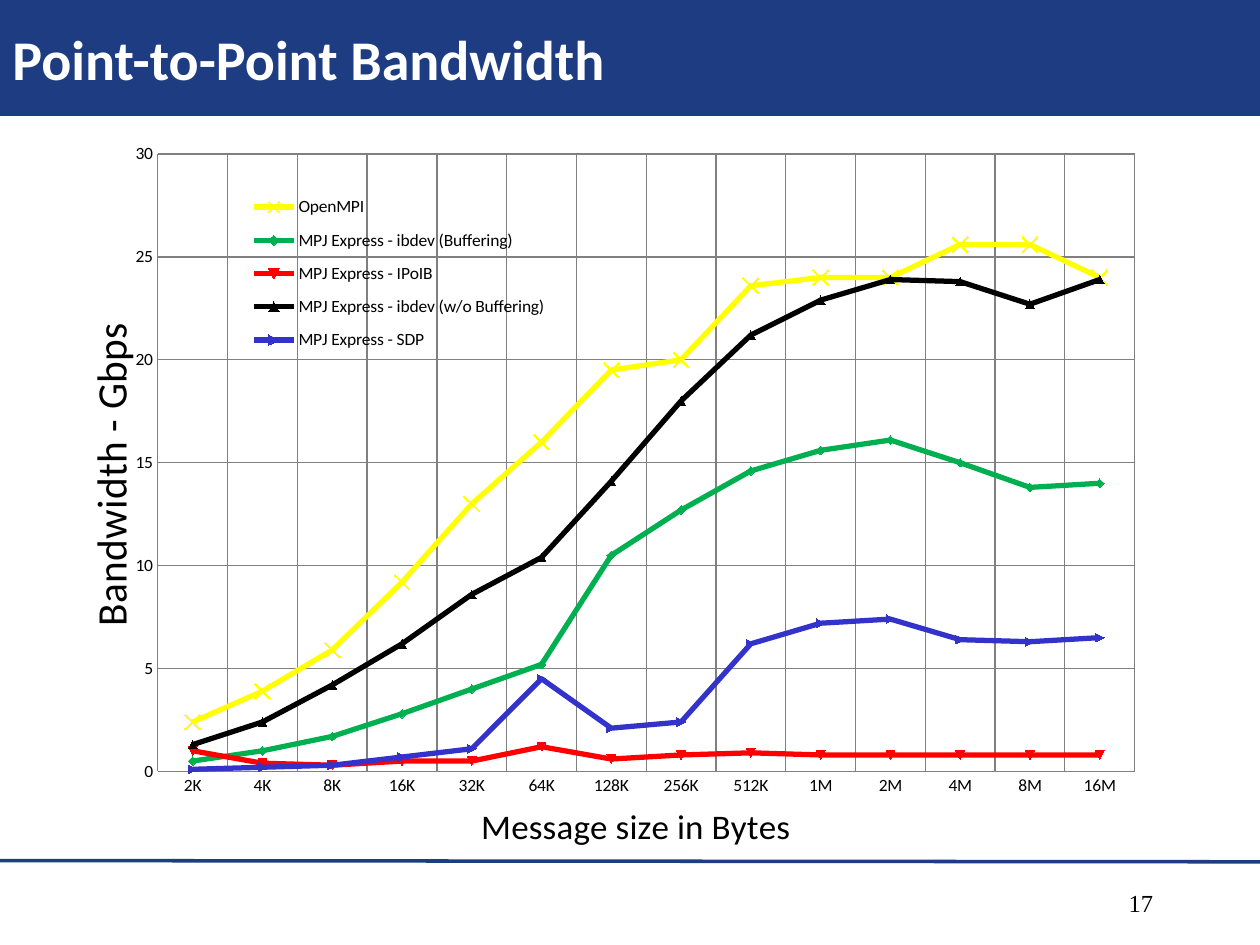
"""Build the point-to-point bandwidth slide."""
import pptx
import pptx.chart.data
import pptx.dml.color
import pptx.enum.chart
import pptx.enum.shapes
import pptx.enum.text
import pptx.oxml
import pptx.oxml.ns
import pptx.util
from pptx.util import Inches, Pt

RGBColor = pptx.dml.color.RGBColor
MarkerStyle = pptx.enum.chart.XL_MARKER_STYLE

NAVY = RGBColor(0x1E, 0x3C, 0x82)
WHITE = RGBColor(0xFF, 0xFF, 0xFF)
BLACK = RGBColor(0, 0, 0)
GRAY = RGBColor(0x80, 0x80, 0x80)
YELLOW = RGBColor(0xFF, 0xFF, 0)
GREEN = RGBColor(0, 0xB0, 0x50)
RED = RGBColor(0xFF, 0, 0)
BLUE = RGBColor(0x33, 0x33, 0xCC)

MESSAGE_SIZES = ["2K", "4K", "8K", "16K", "32K", "64K", "128K",
                 "256K", "512K", "1M", "2M", "4M", "8M", "16M"]
BANDWIDTHS = [
    ("OpenMPI", YELLOW, MarkerStyle.X, 9,
     [2.4, 3.9, 5.9, 9.2, 13, 16, 19.5, 20, 23.6, 24, 24, 25.6, 25.6, 24]),
    ("MPJ Express - ibdev (Buffering)", GREEN, MarkerStyle.AUTOMATIC, 5,
     [0.5, 1, 1.7, 2.8, 4, 5.2, 10.5, 12.7, 14.6, 15.6, 16.1, 15, 13.8, 14]),
    ("MPJ Express - IPoIB", RED, MarkerStyle.AUTOMATIC, 5,
     [1, 0.4, 0.3, 0.5, 0.5, 1.2, 0.6, 0.8, 0.9, 0.8, 0.8, 0.8, 0.8, 0.8]),
    ("MPJ Express - ibdev (w/o Buffering)", BLACK, MarkerStyle.AUTOMATIC, 5,
     [1.3, 2.4, 4.2, 6.2, 8.6, 10.4, 14.1, 18, 21.2, 22.9, 23.9, 23.8, 22.7, 23.9]),
    ("MPJ Express - SDP", BLUE, MarkerStyle.AUTOMATIC, 5,
     [0.1, 0.2, 0.3, 0.7, 1.1, 4.5, 2.1, 2.4, 6.2, 7.2, 7.4, 6.4, 6.3, 6.5]),
]


def style_font(font, name, size, color, bold=False):
    """Set the face, size, colour and weight of a font."""
    font.name = name
    font.size = Pt(size)
    font.color.rgb = color
    font.bold = bold


def add_footer_rule(page):
    """Draw the line above the footer."""
    rule = page.shapes.add_connector(
        pptx.enum.shapes.MSO_CONNECTOR.STRAIGHT,
        Inches(0), Inches(6.83), Inches(10), Inches(6.84))
    rule.line.color.rgb = NAVY
    rule.line.width = Pt(2)
    pptx.oxml.ns.qn("a:effectLst")
    rule._element.spPr.append(
        rule._element.makeelement(pptx.oxml.ns.qn("a:effectLst"), {}))


def add_title_bar(page, text):
    """Draw the filled bar holding the slide title."""
    bar = page.shapes.add_shape(
        pptx.enum.shapes.MSO_SHAPE.RECTANGLE,
        Inches(0), Inches(0), Inches(10), Inches(0.92))
    bar.shadow.inherit = False
    bar.fill.solid()
    bar.fill.fore_color.rgb = NAVY
    bar.line.fill.background()
    bar.text_frame.text = text
    bar.text_frame.vertical_anchor = pptx.enum.text.MSO_ANCHOR.MIDDLE
    para = bar.text_frame.paragraphs[0]
    para.alignment = pptx.enum.text.PP_ALIGN.LEFT
    style_font(para.runs[0].font, "Calibri", 32, WHITE, bold=True)


def add_page_number(page, text):
    """Write the page number at the lower right."""
    box = page.shapes.add_textbox(
        Inches(7.17), Inches(7), Inches(2.08), Inches(0.5))
    box.text_frame.word_wrap = True
    box.text_frame.text = text
    para = box.text_frame.paragraphs[0]
    para.alignment = pptx.enum.text.PP_ALIGN.RIGHT
    style_font(para.runs[0].font, "Times New Roman", 14, BLACK)


def place_part(element, index, inner=False, **fractions):
    """Give a chart part a manual layout in fractions of the chart."""
    qn = pptx.oxml.ns.qn
    for layout in element.findall(qn("c:layout")):
        element.remove(layout)
    layout = element.makeelement(qn("c:layout"), {})
    manual = layout.makeelement(qn("c:manualLayout"), {})
    settings = {"layoutTarget": "inner"} if inner else {}
    settings.update(xMode="edge", yMode="edge", **fractions)
    for tag, value in settings.items():
        manual.append(manual.makeelement(qn("c:" + tag), {"val": str(value)}))
    layout.append(manual)
    element.insert(index, layout)


def style_axis(axis, title, size, x, y):
    """Set the title, gridlines and line of an axis."""
    axis.has_major_gridlines = True
    axis.major_gridlines.format.line.color.rgb = GRAY
    axis.format.line.color.rgb = GRAY
    axis.major_tick_mark = pptx.enum.chart.XL_TICK_MARK.NONE
    axis.minor_tick_mark = pptx.enum.chart.XL_TICK_MARK.NONE
    frame = axis.axis_title.text_frame
    frame.text = title
    style_font(frame.paragraphs[0].runs[0].font, "Calibri", size, BLACK)
    place_part(axis.axis_title._element, 1, x=x, y=y)


def style_series(series, color, marker_style, marker_size):
    """Set the line and markers of one series."""
    series.smooth = False
    series.format.line.color.rgb = color
    series.format.line.width = Pt(3)
    marker = series.marker
    marker.style = marker_style
    marker.size = marker_size
    marker.format.fill.solid()
    marker.format.fill.fore_color.rgb = color
    marker.format.line.color.rgb = color


def add_bandwidth_chart(page):
    """Add the line chart of bandwidth by message size."""
    chart_data = pptx.chart.data.CategoryChartData()
    chart_data.categories = MESSAGE_SIZES
    for name, _, _, _, values in BANDWIDTHS:
        chart_data.add_series(name, values)
    chart = page.shapes.add_chart(
        pptx.enum.chart.XL_CHART_TYPE.LINE_MARKERS,
        Inches(0.42), Inches(1), Inches(8.59), Inches(5.82), chart_data).chart
    style_font(chart.font, "Calibri", 10, BLACK)
    chart.has_title = False
    plot = chart.plots[0]
    plot.vary_by_categories = False
    for series, (_, color, marker_style, marker_size, _) in zip(plot.series, BANDWIDTHS):
        style_series(series, color, marker_style, marker_size)

    style_axis(chart.category_axis, "Message size in Bytes", 20, 0.39, 0.93)
    style_axis(chart.value_axis, "Bandwidth - Gbps", 24, 0.02, 0.27)
    value_axis = chart.value_axis
    value_axis.minimum_scale = 0
    value_axis.maximum_scale = 30
    value_axis.major_unit = 5
    value_axis.tick_labels.number_format = "General"
    value_axis.tick_labels.number_format_is_linked = False
    body = value_axis.axis_title.text_frame._txBody.bodyPr
    body.set("rot", "-5400000")
    body.set("vert", "horz")

    chart.has_legend = True
    chart.legend.position = pptx.enum.chart.XL_LEGEND_POSITION.RIGHT
    chart.legend.include_in_layout = True
    place_part(chart.legend._element, 1, x=0.17, y=0.08, w=0.3, h=0.25)
    plot_area = chart._chartSpace.chart.plotArea
    place_part(plot_area, 0, inner=True, x=0.097, y=0.039, w=0.903, h=0.857)


def main():
    """Build and save the deck."""
    deck = pptx.Presentation()
    deck.slide_width = Inches(10)
    deck.slide_height = Inches(7.5)
    page = deck.slides.add_slide(deck.slide_layouts[6])
    add_footer_rule(page)
    add_title_bar(page, "Point-to-Point Bandwidth")
    add_page_number(page, "17")
    add_bandwidth_chart(page)
    deck.save("out.pptx")


if __name__ == "__main__":
    main()
